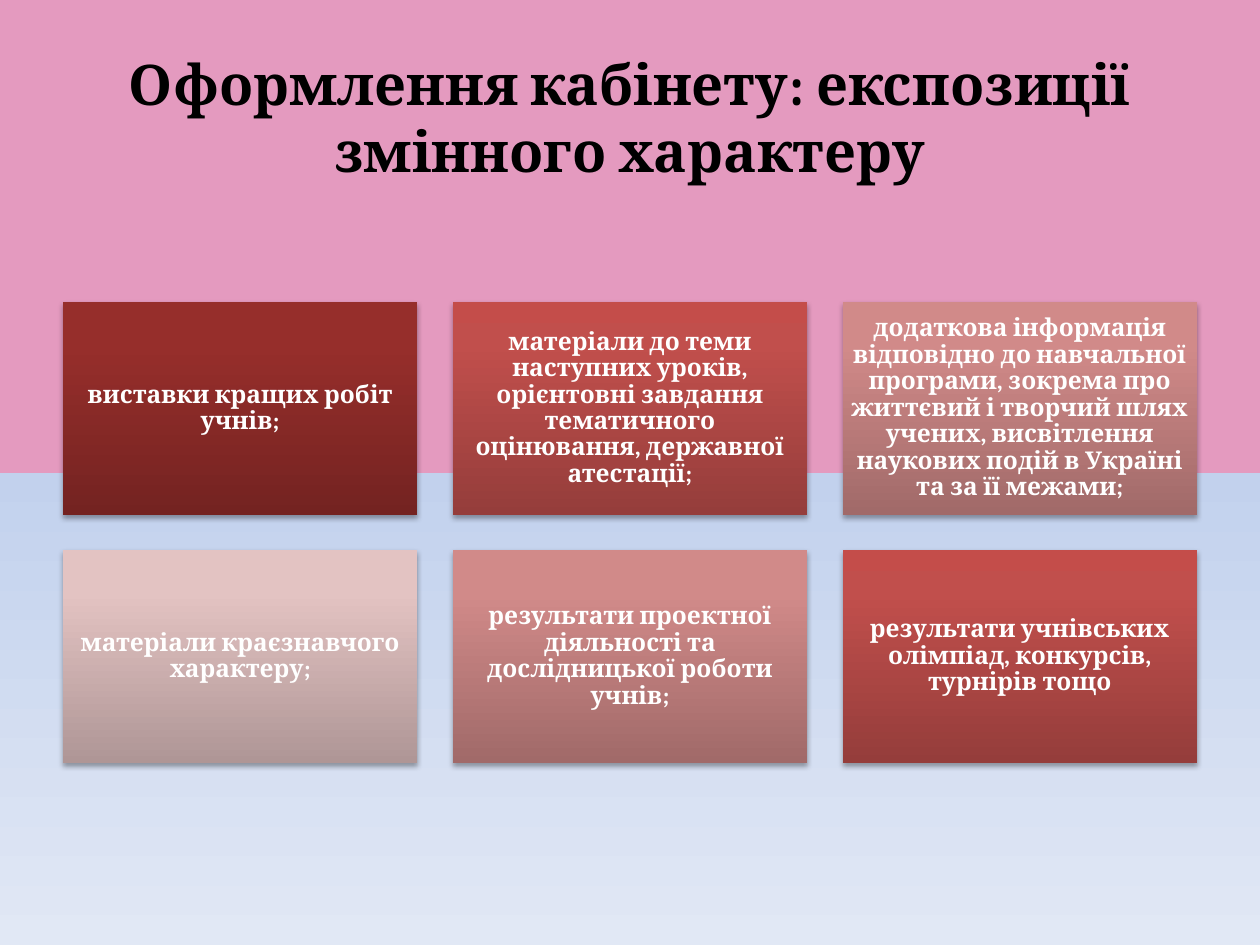
import pptx
import pptx.dml.color
import pptx.enum.shapes
import pptx.enum.text
import pptx.oxml
import pptx.oxml.ns
import pptx.util
from lxml import etree

Pt = pptx.util.Pt
qn = pptx.oxml.ns.qn
FONT = "Cambria"

COLOURS = {"title": "000000", "card text": "FFFFFF", "shadow": "000000"}
GRADIENTS = {
    "background": [(50, "E49ABF"), (50, "C2D1ED"), (100, "E1E8F5")],
    "dark red": [(0, "742321"), (80, "962E2B"), (100, "992C29")],
    "red": [(0, "953D3B"), (80, "C14F4C"), (100, "C44D4A")],
    "rose": [(0, "A16A69"), (80, "D18A89"), (100, "D38988")],
    "pale rose": [(0, "AF9696"), (80, "E3C3C2"), (100, "E5C3C3")],
}


def set_gradient(fill, owner, stops, angle):
    fill.gradient()
    fill.gradient_angle = angle
    stop_list = owner.find(".//" + qn("a:gsLst"))
    stop_list.clear()
    for position, colour in stops:
        stop = etree.SubElement(stop_list, qn("a:gs"), pos=str(position * 1000))
        etree.SubElement(stop, qn("a:srgbClr"), val=colour)


def write_text(frame, text, size, colour):
    frame.word_wrap = True
    frame.vertical_anchor = pptx.enum.text.MSO_ANCHOR.MIDDLE
    paragraph = frame.paragraphs[0]
    paragraph.alignment = pptx.enum.text.PP_ALIGN.CENTER
    run = paragraph.add_run()
    run.text = text
    run.font.name = FONT
    run.font.size = Pt(size)
    run.font.bold = True
    run.font.color.rgb = pptx.dml.color.RGBColor.from_string(colour)
    return paragraph


deck = pptx.Presentation()
deck.slide_width, deck.slide_height = Pt(720), Pt(540)
slide = deck.slides.add_slide(deck.slide_layouts[6])

# Two-part background
set_gradient(slide.background.fill, slide.element, GRADIENTS["background"], 270)

# Title
title = slide.shapes.add_textbox(Pt(36), Pt(21.6), Pt(648), Pt(90))
write_text(title.text_frame, "Оформлення кабінету: експозиції змінного характеру",
           32, COLOURS["title"])

# Grid of cards, three to a row
cards = [
    ("dark red", "виставки кращих робіт учнів;"),
    ("red", "матеріали до теми наступних уроків, орієнтовні завдання "
            "тематичного оцінювання, державної атестації;"),
    ("rose", "додаткова інформація відповідно до навчальної програми, зокрема про "
             "життєвий і творчий шлях учених, висвітлення наукових подій в Україні "
             "та за її межами;"),
    ("pale rose", "матеріали краєзнавчого характеру;"),
    ("rose", "результати проектної діяльності та дослідницької роботи учнів;"),
    ("red", "результати учнівських олімпіад, конкурсів, турнірів тощо"),
]
COLUMNS = 3
LEFT, TOP = 36, 172.6
CARD_WIDTH, CARD_HEIGHT = 202.5, 121.5
GAP = (648 - COLUMNS * CARD_WIDTH) / (COLUMNS - 1)

for index, (tone, text) in enumerate(cards):
    row, column = divmod(index, COLUMNS)
    card = slide.shapes.add_shape(
        pptx.enum.shapes.MSO_SHAPE.RECTANGLE,
        Pt(LEFT + column * (CARD_WIDTH + GAP)), Pt(TOP + row * (CARD_HEIGHT + GAP)),
        Pt(CARD_WIDTH), Pt(CARD_HEIGHT))
    set_gradient(card.fill, card.element, GRADIENTS[tone], 90)
    card.line.fill.background()

    # Soft shadow below the card
    card.shadow.inherit = False
    effects = card.element.spPr.find(qn("a:effectLst"))
    shadow = etree.SubElement(effects, qn("a:outerShdw"), blurRad=str(Pt(3.1)),
                              dist=str(Pt(1.8)), dir="5400000", rotWithShape="0")
    shade = etree.SubElement(shadow, qn("a:srgbClr"), val=COLOURS["shadow"])
    etree.SubElement(shade, qn("a:alpha"), val="35000")

    # Card text
    frame = card.text_frame
    frame.margin_left = frame.margin_right = Pt(4.2)
    frame.margin_top = frame.margin_bottom = Pt(4.2)
    paragraph = write_text(frame, text, 14, COLOURS["card text"])
    paragraph.line_spacing = 0.9
    paragraph.space_after = Pt(4.9)

deck.save("out.pptx")
